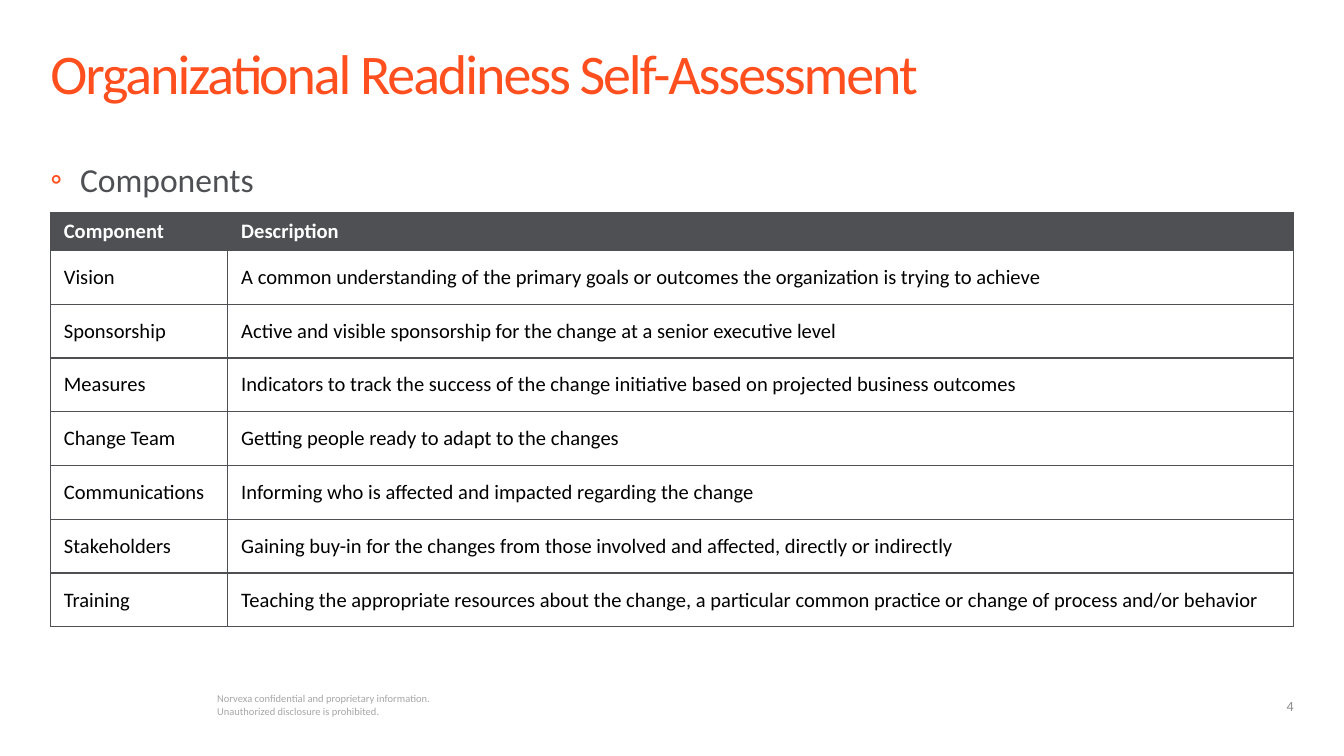
from dataclasses import dataclass

from lxml import etree
from pptx import Presentation
from pptx.dml.color import RGBColor
from pptx.enum.text import MSO_ANCHOR, MSO_AUTO_SIZE, PP_ALIGN
from pptx.oxml.ns import qn
from pptx.util import Inches, Pt

LEFT, RIGHT = PP_ALIGN.LEFT, PP_ALIGN.RIGHT
TOP, MIDDLE = MSO_ANCHOR.TOP, MSO_ANCHOR.MIDDLE
NO_AUTOFIT = MSO_AUTO_SIZE.NONE
TITLE_ONLY = 5
SLIDE_WIDTH = 10
SLIDE_HEIGHT = SLIDE_WIDTH * 9 / 16


@dataclass(frozen=True)
class Theme:
    font: str = "Calibri"
    accent: str = "FF4F1F"
    slate: str = "4E5054"
    ink: str = "000000"
    paper: str = "FFFFFF"
    notice: str = "A6A6A6"
    number: str = "8C8C8C"
    title_size: float = 30
    bullet_size: float = 18
    table_size: float = 11
    number_size: float = 7.5
    notice_size: float = 5.6
    border: float = 0.75


THEME = Theme()

HEADINGS = ("Component", "Description")
COMPONENTS = (
    ("Vision", "A common understanding of the primary goals or outcomes the organization is trying to achieve"),
    ("Sponsorship", "Active and visible sponsorship for the change at a senior executive level"),
    ("Measures", "Indicators to track the success of the change initiative based on projected business outcomes"),
    ("Change Team", "Getting people ready to adapt to the changes"),
    ("Communications", "Informing who is affected and impacted regarding the change"),
    ("Stakeholders", "Gaining buy-in for the changes from those involved and affected, directly or indirectly"),
    ("Training", "Teaching the appropriate resources about the change, a particular common practice or change of "
                 "process and/or behavior"),
)


def write(frame, text, *, size, color, bold=False, align=LEFT, anchor=TOP,
          insets=None, spacing=None, tracking=None, bullet=None):
    frame.word_wrap = True
    frame.vertical_anchor = anchor
    if insets is not None:
        (frame.margin_left, frame.margin_top,
         frame.margin_right, frame.margin_bottom) = map(Inches, insets)
    paragraph = frame.paragraphs[0]
    paragraph.alignment = align
    if spacing:
        paragraph.line_spacing = spacing
    if bullet:
        add_bullet(paragraph, bullet, THEME.accent, 0.22)
    run = paragraph.add_run()
    run.text = text
    run.font.name = THEME.font
    run.font.size = Pt(size)
    run.font.bold = bold
    run.font.color.rgb = RGBColor.from_string(color)
    if tracking:
        run.font._element.set("spc", str(round(tracking * 100)))


def add_bullet(paragraph, character, color, indent):
    properties = paragraph._p.get_or_add_pPr()
    properties.set("marL", str(Inches(indent)))
    properties.set("indent", str(-Inches(indent)))
    tint = etree.SubElement(properties, qn("a:buClr"))
    etree.SubElement(tint, qn("a:srgbClr"), val=color)
    etree.SubElement(properties, qn("a:buFont"), typeface=THEME.font)
    etree.SubElement(properties, qn("a:buChar"), char=character)


def add_borders(cell, color, width):
    properties = cell._tc.get_or_add_tcPr()
    for position, side in enumerate(("a:lnL", "a:lnR", "a:lnT", "a:lnB")):
        line = etree.Element(qn(side), w=str(Pt(width)))
        fill = etree.SubElement(line, qn("a:solidFill"))
        etree.SubElement(fill, qn("a:srgbClr"), val=color)
        properties.insert(position, line)


def add_title(slide, left, top, width, height):
    title = slide.shapes.title
    title.left, title.top, title.width, title.height = map(Inches, (left, top, width, height))
    title.text_frame.auto_size = NO_AUTOFIT
    write(title.text_frame, "Organizational Readiness Self-Assessment", size=THEME.title_size,
          color=THEME.accent, insets=(0, 0, 0, 0), spacing=0.9, tracking=-1.1)


def add_body(slide, left, top, width, height):
    body = slide.shapes.add_textbox(*map(Inches, (left, top, width, height)))
    write(body.text_frame, "Components", size=THEME.bullet_size, color=THEME.slate,
          insets=(0, 0.2, 0, 0), bullet="◦")


def add_component_table(slide, left, top, width, height):
    name_width, row_height = 1.32, 0.4
    header_height = height - row_height * len(COMPONENTS)
    rows = (HEADINGS, *COMPONENTS)
    table = slide.shapes.add_table(
        len(rows), len(HEADINGS), *map(Inches, (left, top, width, height))).table
    table.columns[0].width = Inches(name_width)
    table.columns[1].width = Inches(width - name_width)
    for index, entries in enumerate(rows):
        header = index == 0
        table.rows[index].height = Inches(header_height if header else row_height)
        for column, entry in enumerate(entries):
            cell = table.cell(index, column)
            cell.fill.solid()
            cell.fill.fore_color.rgb = RGBColor.from_string(THEME.slate if header else THEME.paper)
            add_borders(cell, THEME.slate, THEME.border)
            write(cell.text_frame, entry, size=THEME.table_size, bold=header,
                  color=THEME.paper if header else THEME.ink)
            cell.vertical_anchor = MIDDLE


def add_footer(slide, left, top, width, height):
    notice = slide.shapes.add_textbox(
        Inches(left + 1.24), Inches(top + 0.05), Inches(1.78), Inches(height - 0.05))
    write(notice.text_frame,
          "Norvexa confidential and proprietary information. Unauthorized disclosure is prohibited.",
          size=THEME.notice_size, color=THEME.notice, insets=(0, 0, 0, 0))
    number_width = 2.09
    number = slide.shapes.add_textbox(
        Inches(left + width - number_width), Inches(top), Inches(number_width), Inches(height))
    write(number.text_frame, "4", size=THEME.number_size, color=THEME.number,
          align=RIGHT, anchor=MIDDLE, insets=(0.1, 0.05, 0, 0.05))


def main():
    deck = Presentation()
    deck.slide_width, deck.slide_height = Inches(SLIDE_WIDTH), Inches(SLIDE_HEIGHT)
    slide = deck.slides.add_slide(deck.slide_layouts[TITLE_ONLY])
    width = 9.25
    left = (SLIDE_WIDTH - width) / 2
    add_title(slide, left, 0.34, width, 0.64)
    add_footer(slide, left, 5.1, width, 0.3)
    add_body(slide, left, 0.98, width, 3.9)
    add_component_table(slide, left, 1.58, width, 3.08)
    deck.save("out.pptx")


if __name__ == "__main__":
    main()
